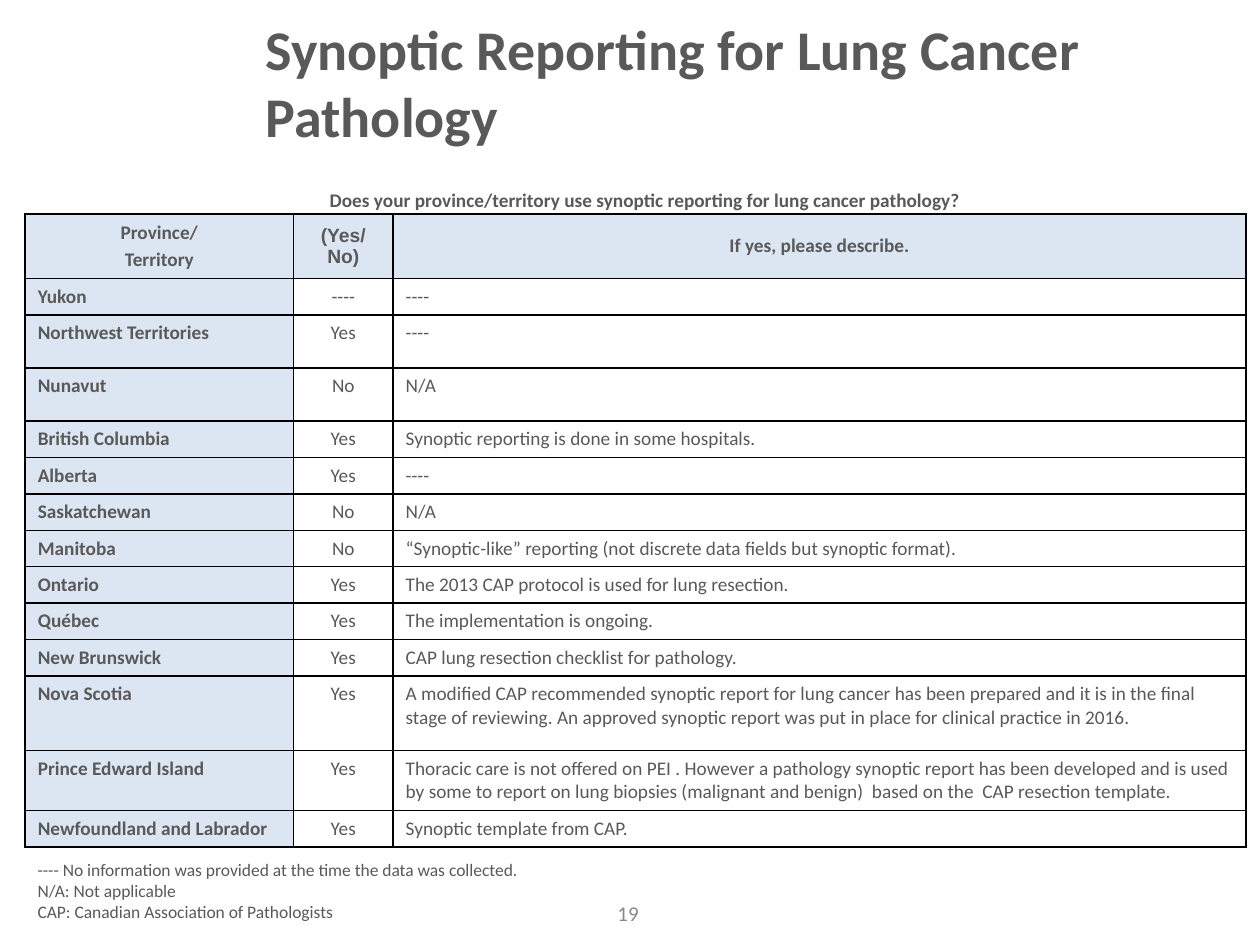
from dataclasses import dataclass

from lxml import etree
from pptx import Presentation, util as u
from pptx.dml.color import RGBColor
from pptx.enum import shapes, text
from pptx.oxml import ns

CENTER, LEFT = text.PP_ALIGN.CENTER, text.PP_ALIGN.LEFT
TOP, MIDDLE = text.MSO_ANCHOR.TOP, text.MSO_ANCHOR.MIDDLE


@dataclass(frozen=True)
class Theme:
    ink: str = "595959"
    muted: str = "898989"
    tint: str = "DCE6F2"
    paper: str = "FFFFFF"
    rule: str = "000000"
    body_font: str = "Calibri"
    answer_font: str = "Arial"
    heading: int = 32
    page: int = 12
    table: int = 11
    note: int = 10


THEME = Theme()


def write(frame, *lines, size=THEME.table, color=THEME.ink, font=THEME.body_font,
          bold=False, align=LEFT, gap=0):
    for index, line in enumerate(lines):
        paragraph = frame.add_paragraph() if index else frame.paragraphs[0]
        paragraph.alignment = align
        paragraph.space_before = u.Pt(gap if index else 0)
        run = paragraph.add_run()
        run.text = line
        run.font.size = u.Pt(size)
        run.font.name = font
        run.font.bold = bold
        run.font.color.rgb = RGBColor.from_string(color)


class Page:
    COLUMNS, ROWS = 100, 75

    def __init__(self, deck, theme):
        self.deck, self.theme = deck, theme
        self.slide = deck.slides.add_slide(deck.slide_layouts[5])

    def across(self, columns):
        return round(self.deck.slide_width * columns / self.COLUMNS)

    def down(self, rows):
        return round(self.deck.slide_height * rows / self.ROWS)

    def area(self, left, top, width, height):
        return self.across(left), self.down(top), self.across(width), self.down(height)

    def fill(self, target, color):
        target.fill.solid()
        target.fill.fore_color.rgb = RGBColor.from_string(color)

    def settle(self, frame, anchor):
        frame.word_wrap = True
        frame.auto_size = text.MSO_AUTO_SIZE.NONE
        frame.vertical_anchor = anchor

    def title(self, at, wording, **style):
        title = self.slide.shapes.title
        title.left, title.top, title.width, title.height = self.area(*at)
        self.settle(title.text_frame, MIDDLE)
        write(title.text_frame, wording, **style)

    def label(self, at, wording, **style):
        label = self.slide.shapes.add_textbox(*self.area(*at))
        self.settle(label.text_frame, MIDDLE)
        write(label.text_frame, wording, **style)

    def panel(self, at, *lines, **style):
        panel = self.slide.shapes.add_shape(shapes.MSO_SHAPE.RECTANGLE, *self.area(*at))
        panel.shadow.inherit = False
        panel.line.fill.background()
        self.fill(panel, self.theme.paper)
        self.settle(panel.text_frame, TOP)
        write(panel.text_frame, *lines, **style)

    def border(self, cell):
        properties = cell._tc.get_or_add_tcPr()
        for position, side in enumerate(("lnL", "lnR", "lnT", "lnB")):
            line = etree.Element(ns.qn(f"a:{side}"), w=str(u.Pt(1)))
            solid = etree.SubElement(line, ns.qn("a:solidFill"))
            etree.SubElement(solid, ns.qn("a:srgbClr"), val=self.theme.rule)
            properties.insert(position, line)

    def cell(self, cell, lines, fill, anchor, **style):
        self.fill(cell, fill)
        self.border(cell)
        cell.vertical_anchor = anchor
        write(cell.text_frame, *lines, **style)

    def table(self, left, top, widths, header, header_height, answers):
        heights = [header_height] + [height for height, *_ in answers]
        at = self.area(left, top, sum(widths), sum(heights))
        table = self.slide.shapes.add_table(len(heights), len(widths), *at).table
        for column, width in zip(table.columns, widths):
            column.width = self.across(width)
        for row, height in zip(table.rows, heights):
            row.height = self.down(height)
        for index, (lines, font) in enumerate(header):
            self.cell(table.cell(0, index), lines, self.theme.tint, MIDDLE,
                      font=font, bold=True, align=CENTER, gap=self.theme.table * 0.2)
        columns = ((self.theme.tint, True, LEFT), (self.theme.paper, False, CENTER),
                   (self.theme.paper, False, LEFT))
        for row, (_, *values) in enumerate(answers, 1):
            for index, (value, (fill, bold, align)) in enumerate(zip(values, columns)):
                self.cell(table.cell(row, index), [value], fill, TOP, bold=bold, align=align)


SINGLE, ROOMY = 2.89, 4.22
HEADER = (
    (("Province/", "Territory"), THEME.body_font),
    (("(Yes/No)",), THEME.answer_font),
    (("If yes, please describe.",), THEME.body_font),
)
ANSWERS = (
    (SINGLE, "Yukon", "----", "----"),
    (ROOMY, "Northwest Territories", "Yes", "----"),
    (ROOMY, "Nunavut", "No", "N/A"),
    (SINGLE, "British Columbia", "Yes", "Synoptic reporting is done in some hospitals."),
    (SINGLE, "Alberta", "Yes", "----"),
    (SINGLE, "Saskatchewan", "No", "N/A"),
    (SINGLE, "Manitoba", "No",
     "“Synoptic-like” reporting (not discrete data fields but synoptic format)."),
    (SINGLE, "Ontario", "Yes", "The 2013 CAP protocol is used for lung resection."),
    (SINGLE, "Québec", "Yes", "The implementation is ongoing."),
    (SINGLE, "New Brunswick", "Yes", "CAP lung resection checklist for pathology."),
    (5.9, "Nova Scotia", "Yes",
     "A modified CAP recommended synoptic report for lung cancer has been prepared and it is "
     "in the final stage of reviewing. An approved synoptic report was put in place for "
     "clinical practice in 2016."),
    (4.75, "Prince Edward Island", "Yes",
     "Thoracic care is not offered on PEI . However a pathology synoptic report has been "
     "developed and is used by some to report on lung biopsies (malignant and benign)  based "
     "on the  CAP resection template."),
    (SINGLE, "Newfoundland and Labrador", "Yes", "Synoptic template from CAP."),
)


def main():
    deck = Presentation()
    deck.slide_width, deck.slide_height = u.Inches(10), u.Inches(7.5)
    page = Page(deck, THEME)
    page.title((12.2, 14.6, 78, 2.5),
               "Does your province/territory use synoptic reporting for lung cancer pathology?",
               bold=True, align=CENTER)
    page.table(2, 17, (21.3, 7.9, 67.7), HEADER, 5.1, ANSWERS)
    page.label((38.2, 70.5, 23.3, 4), "19", size=THEME.page, color=THEME.muted, align=CENTER)
    page.label((20.1, 3, 78.8, 6.9), "Synoptic Reporting for Lung Cancer Pathology",
               size=THEME.heading, bold=True)
    page.panel((2, 67.7, 43.3, 6.1),
               "---- No information was provided at the time the data was collected.",
               "N/A: Not applicable",
               "CAP: Canadian Association of Pathologists", size=THEME.note)
    deck.save("out.pptx")


if __name__ == "__main__":
    main()
